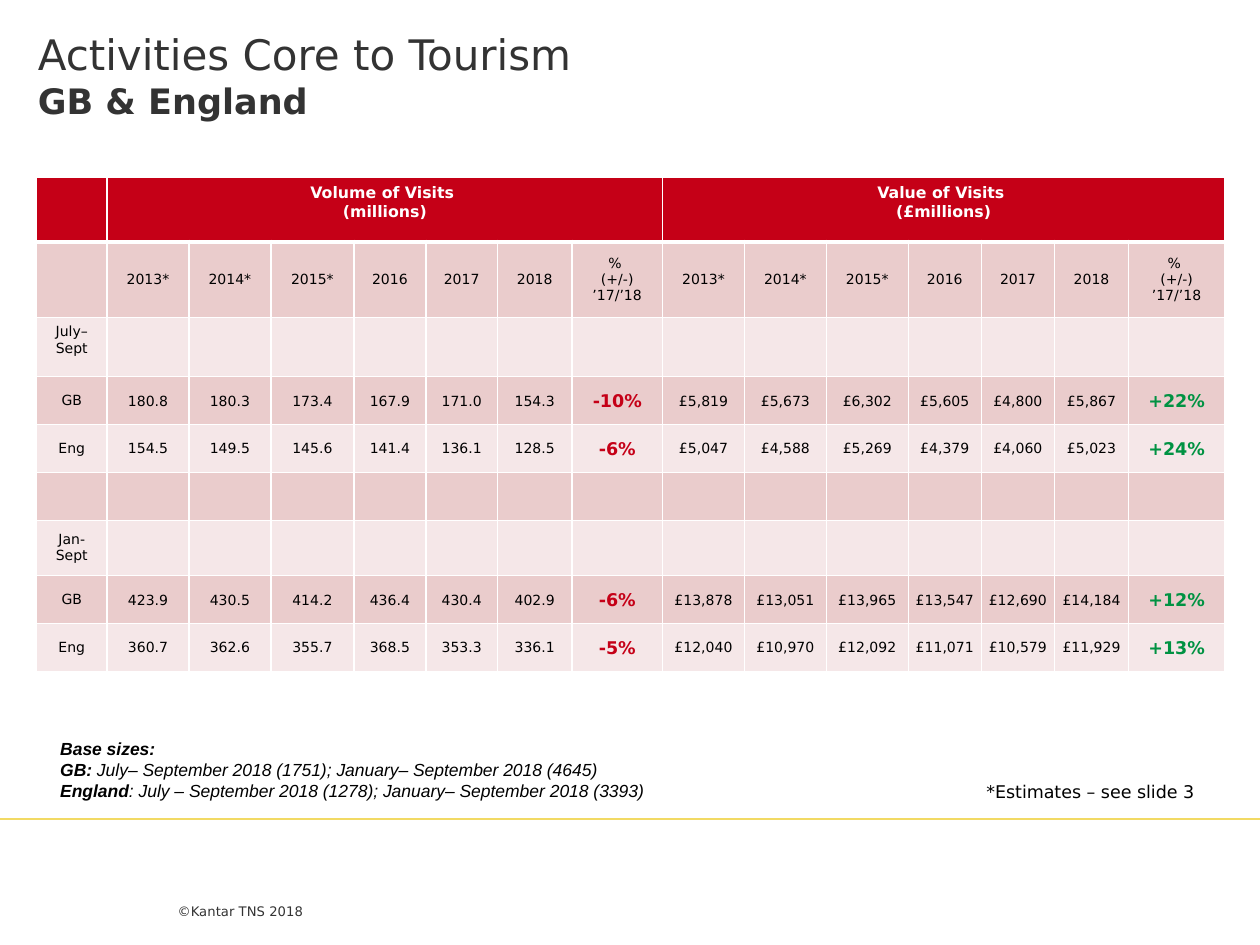
from typing import NamedTuple

import lxml.etree
import pptx
import pptx.dml.color
import pptx.enum.shapes
import pptx.enum.text
import pptx.oxml.ns
import pptx.util

Inches = pptx.util.Inches
ALIGN = pptx.enum.text.PP_ALIGN
ANCHOR = pptx.enum.text.MSO_ANCHOR

SANS = "DejaVu Sans"
RED, GREEN, WHITE, BLACK, GREY = "C50017", "009242", "FFFFFF", "000000", "333333"
BANDS = ("F5E7E8", "EACCCC")

YEARS = ["2013*", "2014*", "2015*", "2016", "2017", "2018"]
HALF_HEADER = YEARS + ["% \n(+/-) ’17/’18"]
COLUMN_WIDTHS = [0.56, 0.65, 0.65, 0.66, 0.57, 0.57, 0.59, 0.72,
                 0.65, 0.65, 0.65, 0.58, 0.58, 0.59, 0.76]
ROW_HEIGHTS = [0.51, 0.6, 0.47, 0.38, 0.38, 0.38, 0.44, 0.38, 0.38]
ROWS = [
    ["", "Volume of Visits \n(millions)"] + [""] * 6 + ["Value of Visits \n(£millions)"] + [""] * 6,
    [""] + HALF_HEADER * 2,
    ["July–Sept"] + [""] * 14,
    ["GB", "180.8", "180.3", "173.4", "167.9", "171.0", "154.3", "-10%",
     "£5,819", "£5,673", "£6,302", "£5,605", "£4,800", "£5,867", "+22%"],
    ["Eng", "154.5", "149.5", "145.6", "141.4", "136.1", "128.5", "-6%",
     "£5,047", "£4,588", "£5,269", "£4,379", "£4,060", "£5,023", "+24%"],
    [""] * 15,
    ["Jan-Sept"] + [""] * 14,
    ["GB", "423.9", "430.5", "414.2", "436.4", "430.4", "402.9", "-6%",
     "£13,878", "£13,051", "£13,965", "£13,547", "£12,690", "£14,184", "+12%"],
    ["Eng", "360.7", "362.6", "355.7", "368.5", "353.3", "336.1", "-5%",
     "£12,040", "£10,970", "£12,092", "£11,071", "£10,579", "£11,929", "+13%"],
]


class Span(NamedTuple):
    text: str
    size: float
    color: str = BLACK
    font: str = SANS
    bold: bool = False
    italic: bool = False


class TextBlock(NamedTuple):
    box: tuple[float, float, float, float]
    paragraphs: list[list[Span]]
    insets: tuple[float, float, float, float] = (0.1, 0.05, 0.1, 0.05)
    anchor: ANCHOR = ANCHOR.TOP
    wrap: bool = True


class Rule(NamedTuple):
    left: float
    right: float
    color: str
    width: float


def base(text: str, bold: bool = False) -> Span:
    return Span(text, 10, font="Arial", bold=bold, italic=True)


TEXT_BLOCKS = [
    TextBlock((1.41, 6.92, 1.06, 0.58), [[Span("©Kantar TNS 2018", 7.5, GREY)]],
              (0, 0, 0, 0.29), ANCHOR.BOTTOM),
    TextBlock((0, 0, 5.55, 1.41),
              [[Span("Activities Core to Tourism\n", 24, GREY),
                Span("GB & England", 20, GREY, bold=True)]], (0.3, 0.23, 0.3, 0)),
    TextBlock((0.38, 5.81, 8.44, 0.61),
              [[base("Base sizes: \nGB:", True),
                base(" July– September 2018 (1751); January– September 2018 (4645)")],
               [base("England", True),
                base(": July – September 2018 (1278); January– September 2018 (3393)")]]),
    TextBlock((7.73, 6.15, 1.92, 0.27), [[Span("*Estimates – see slide 3", 10)]], wrap=False),
]
RULES = [Rule(0.31, 9.68, "262626", 0.75), Rule(0, 10, "F2DA64", 1.5)]


def rgb(value: str) -> pptx.dml.color.RGBColor:
    return pptx.dml.color.RGBColor.from_string(value)


def add_span(paragraph, span: Span) -> None:
    """Add the span's text, turning each newline into a line break."""
    font_values = {"name": span.font, "size": pptx.util.Pt(span.size),
                   "bold": span.bold, "italic": span.italic}
    for index, line in enumerate(span.text.split("\n")):
        if index:
            paragraph.add_line_break()
        if line:
            run = paragraph.add_run()
            run.text = line
            for name, value in font_values.items():
                setattr(run.font, name, value)
            run.font.color.rgb = rgb(span.color)


def fill_frame(frame, paragraphs: list[list[Span]], align: ALIGN) -> None:
    for index, spans in enumerate(paragraphs):
        paragraph = frame.add_paragraph() if index else frame.paragraphs[0]
        paragraph.alignment = align
        for span in spans:
            add_span(paragraph, span)


def set_margins(target, insets: tuple[float, float, float, float]) -> None:
    for side, inset in zip(("left", "top", "right", "bottom"), insets):
        setattr(target, f"margin_{side}", Inches(inset))


def draw_text(slide, block: TextBlock) -> None:
    frame = slide.shapes.add_textbox(*map(Inches, block.box)).text_frame
    frame.word_wrap = block.wrap
    frame.vertical_anchor = block.anchor
    set_margins(frame, block.insets)
    fill_frame(frame, block.paragraphs, ALIGN.LEFT)


def draw_rule(slide, rule: Rule) -> None:
    line = slide.shapes.add_connector(
        pptx.enum.shapes.MSO_CONNECTOR.STRAIGHT,
        Inches(rule.left), Inches(6.5), Inches(rule.right), Inches(6.5))
    line.line.color.rgb = rgb(rule.color)
    line.line.width = pptx.util.Pt(rule.width)
    lxml.etree.SubElement(line._element.spPr, pptx.oxml.ns.qn("a:effectLst"))


def set_borders(cell, widths: dict[str, float]) -> None:
    properties = cell._tc.get_or_add_tcPr()
    for side, width in widths.items():
        border = lxml.etree.SubElement(properties, pptx.oxml.ns.qn(f"a:ln{side}"),
                                       w=str(pptx.util.Pt(width)))
        solid = lxml.etree.SubElement(border, pptx.oxml.ns.qn("a:solidFill"))
        lxml.etree.SubElement(solid, pptx.oxml.ns.qn("a:srgbClr"), val=WHITE)


def cell_span(text: str, is_header: bool) -> Span:
    if is_header:
        return Span(text, 9, WHITE, bold=True)
    if text[0] in "+-":
        return Span(text, 10, GREEN if text[0] == "+" else RED, bold=True)
    return Span(text, 8)


def draw_cell(cell, text: str, row: int, column: int) -> None:
    is_header = row == 0
    set_borders(cell, {"L": 1, "R": 1, "T": 3 if row == 1 else 1, "B": 3 if is_header else 1})
    cell.fill.solid()
    cell.fill.fore_color.rgb = rgb(RED if is_header else BANDS[row % 2])
    if not text:
        ending = cell.text_frame.paragraphs[0]._p.get_or_add_endParaRPr()
        ending.set("sz", "800")
        return
    cell.vertical_anchor = ANCHOR.TOP if row in (0, 2) else ANCHOR.MIDDLE
    if row > 1 and column:
        set_margins(cell, (0.01, 0.01, 0.01, 0))
    lines = [[cell_span(line, is_header)] for line in text.split("\n")]
    fill_frame(cell.text_frame, lines, ALIGN.CENTER)


def draw_visits_table(slide) -> None:
    table = slide.shapes.add_table(
        len(ROWS), len(COLUMN_WIDTHS), Inches(0.29), Inches(1.41),
        Inches(sum(COLUMN_WIDTHS)), Inches(sum(ROW_HEIGHTS))).table
    for column, width in zip(table.columns, COLUMN_WIDTHS):
        column.width = Inches(width)
    for row, height in zip(table.rows, ROW_HEIGHTS):
        row.height = Inches(height)
    for first in (1, 8):
        table.cell(0, first).merge(table.cell(0, first + 6))
    for row, texts in enumerate(ROWS):
        for column, text in enumerate(texts):
            draw_cell(table.cell(row, column), text, row, column)


def main() -> None:
    presentation = pptx.Presentation()
    presentation.slide_width = Inches(10)
    presentation.slide_height = Inches(7.5)
    slide = presentation.slides.add_slide(presentation.slide_layouts[6])
    for rule in RULES:
        draw_rule(slide, rule)
    copyright_line, title, *notes = TEXT_BLOCKS
    draw_text(slide, copyright_line)
    draw_text(slide, title)
    draw_visits_table(slide)
    for note in notes:
        draw_text(slide, note)
    presentation.save("out.pptx")


if __name__ == "__main__":
    main()
